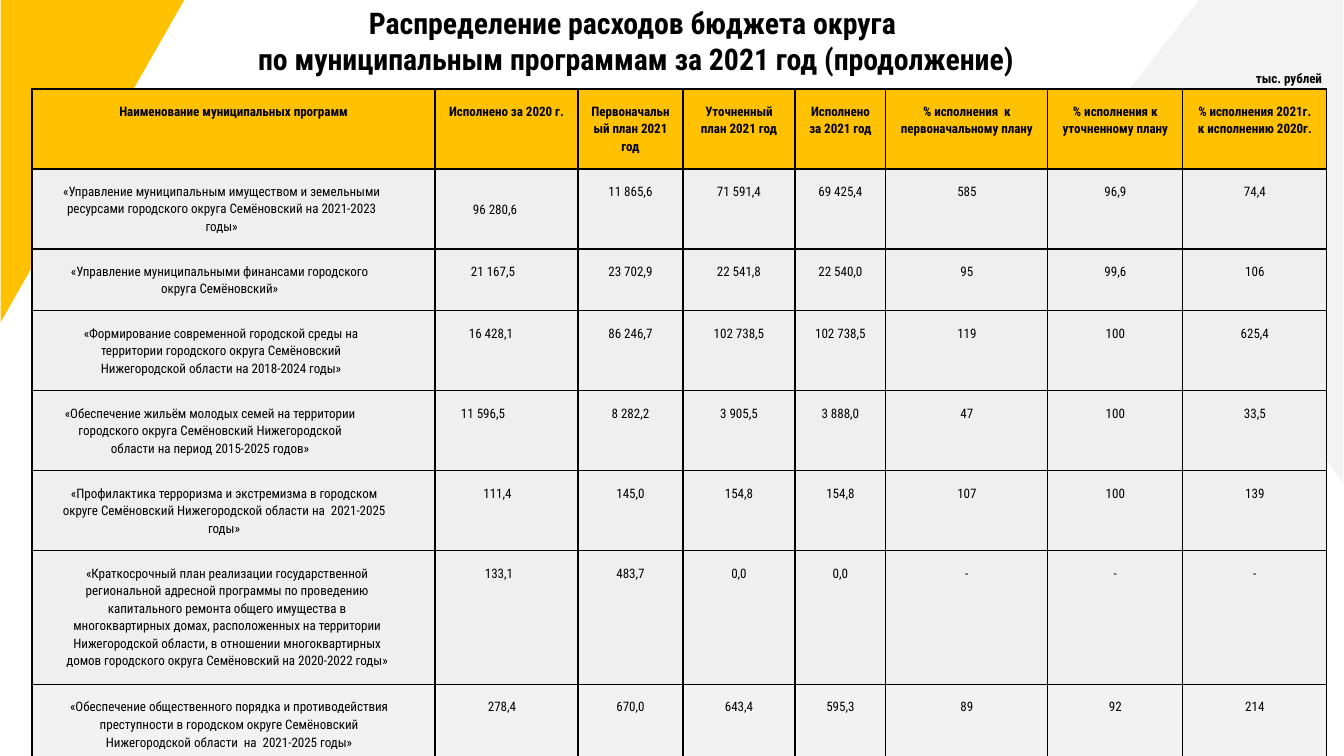
from lxml import etree
from pptx import Presentation
from pptx.dml.color import RGBColor
from pptx.enum.shapes import MSO_SHAPE
from pptx.enum.text import MSO_ANCHOR, PP_ALIGN
from pptx.oxml.ns import qn
from pptx.util import Pt

CENTER, LEFT = PP_ALIGN.CENTER, PP_ALIGN.LEFT
TOP, MIDDLE = MSO_ANCHOR.TOP, MSO_ANCHOR.MIDDLE
TRIANGLE, CORNER = MSO_SHAPE.ISOSCELES_TRIANGLE, MSO_SHAPE.RIGHT_TRIANGLE

FONT = "Roboto Condensed"
BLACK, GOLD, GREY, PALE, MIST = "000000", "FFC100", "EFEFEF", "F2F2F2", "F3F3F3"
WIDE, HIGH = 1344, 756
INSET, INDENT = 13, 13

TITLE = "Распределение расходов бюджета округа \vпо муниципальным программам за 2021 год (продолжение)"
UNIT = "тыс. рублей"
DECOR = [
    (TRIANGLE, (884, 24, 668, 251), 270, MIST),
    (CORNER, (-69, 69, 323, 184), 90, GOLD),
]
HEAD = [
    "Наименование муниципальных программ", "Исполнено за 2020 г.",
    "Первоначальный план 2021 год", "Уточненный план 2021 год",
    "Исполнено за 2021 год", "% исполнения  к первоначальному плану",
    "% исполнения к уточненному плану", "% исполнения 2021г.\vк исполнению 2020г.",
]
ROWS = [
    ["«Управление муниципальным имуществом и земельными ресурсами городского округа Семёновский на 2021-2023 годы»",
     "96 280,6", "11 865,6", "71 591,4", "69 425,4", "585", "96,9", "74,4"],
    ["«Управление муниципальными финансами городского округа Семёновский»",
     "21 167,5", "23 702,9", "22 541,8", "22 540,0", "95", "99,6", "106"],
    ["«Формирование современной городской среды на территории городского округа Семёновский Нижегородской области на 2018-2024 годы»",
     "16 428,1", "86 246,7", "102 738,5", "102 738,5", "119", "100", "625,4"],
    ["«Обеспечение жильём молодых семей на территории городского округа Семёновский Нижегородской области на период 2015-2025 годов»",
     "11 596,5", "8 282,2", "3 905,5", "3 888,0", "47", "100", "33,5"],
    ["«Профилактика терроризма и экстремизма в городском округе Семёновский Нижегородской области на  2021-2025 годы»",
     "111,4", "145,0", "154,8", "154,8", "107", "100", "139"],
    ["«Краткосрочный план реализации государственной региональной адресной программы по проведению капитального ремонта "
     "общего имущества в многоквартирных домах, расположенных на территории Нижегородской области, в отношении "
     "многоквартирных домов городского округа Семёновский на 2020-2022 годы»",
     "133,1", "483,7", "0,0", "0,0", "-", "-", "-"],
    ["«Обеспечение общественного порядка и противодействия преступности в городском округе Семёновский Нижегородской области  на  2021-2025 годы»",
     "278,4", "670,0", "643,4", "595,3", "89", "92", "214"],
]
COLS = [403, 143, 105, 112, 91, 162, 135, 144]
TALL = [63, 60, 60, 62, 78, 60, 114, 62]
PADS = [(37, 36), (41, 40), (38, 44), (60, 60), (32, 31), (26, 28), (22, 22)]


def px(size):
    """Turn px into EMU."""
    return round(size * 914400 / 134.4)


def paint(fill, color):
    """Give a fill one solid colour."""
    fill.solid()
    fill.fore_color.rgb = RGBColor.from_string(color)


def style(para, size, bold, align):
    """Set the look of a paragraph."""
    para.alignment = align
    font = para.font
    font.name, font.size, font.bold = FONT, Pt(size), bold
    font.color.rgb = RGBColor.from_string(BLACK)


def label(slide, text, box, size, align, inset, wrap):
    """Add a bold text box."""
    frame = slide.shapes.add_textbox(*map(px, box)).text_frame
    frame.word_wrap = wrap
    frame.vertical_anchor = TOP
    frame.margin_left = frame.margin_right = px(inset)
    frame.margin_top = frame.margin_bottom = px(inset)
    frame.text = text
    style(frame.paragraphs[0], size, True, align)


def border(cell):
    """Draw thin black lines on all sides of a cell."""
    props = cell._tc.get_or_add_tcPr()
    for spot, side in enumerate(("lnL", "lnR", "lnT", "lnB")):
        line = etree.Element(qn("a:" + side), w=str(Pt(0.75)))
        fill = etree.SubElement(line, qn("a:solidFill"))
        etree.SubElement(fill, qn("a:srgbClr"), val=BLACK)
        props.insert(spot, line)


def fill_cell(cell, text, bold, color, pad):
    """Write and style one cell."""
    cell.text = text
    cell.margin_left = cell.margin_right = px(INSET)
    cell.margin_top = cell.margin_bottom = px(INSET)
    paint(cell.fill, color)
    border(cell)
    para = cell.text_frame.paragraphs[0]
    style(para, 7, bold, CENTER)
    para.line_spacing = 1.15
    if pad:
        props = para._p.get_or_add_pPr()
        props.set("marL", str(px(INDENT)))
        props.set("marR", str(px(pad)))


def add_grid(slide):
    """Add the table of programmes."""
    data = [HEAD] + ROWS
    box = (32, 89, sum(COLS), sum(TALL))
    table = slide.shapes.add_table(len(data), len(COLS), *map(px, box)).table
    table.first_row = table.horz_banding = False
    for col, width in zip(table.columns, COLS):
        col.width = px(width)
    for r, (row, height) in enumerate(zip(data, TALL)):
        table.rows[r].height = px(height)
        color = GOLD if r == 0 else PALE if r == len(ROWS) else GREY
        for c, text in enumerate(row):
            pad = PADS[r - 1][c] if r and c < 2 else 0
            fill_cell(table.cell(r, c), text, r == 0, color, pad)
    table.cell(1, 1).vertical_anchor = MIDDLE


def main():
    """Build the slide."""
    deck = Presentation()
    deck.slide_width, deck.slide_height = px(WIDE), px(HIGH)
    slide = deck.slides.add_slide(deck.slide_layouts[6])
    for kind, box, turn, color in DECOR:
        shape = slide.shapes.add_shape(kind, *map(px, box))
        shape.rotation = turn
        shape.shadow.inherit = False
        paint(shape.fill, color)
        shape.line.fill.background()
        if kind == TRIANGLE:
            shape.adjustments[0] = 0.52
    label(slide, TITLE, (77, -8, 1118, 52), 16, CENTER, INSET, True)
    add_grid(slide)
    label(slide, UNIT, (1255, 69, 80, 17), 7, LEFT, 1, False)
    deck.save("out.pptx")


if __name__ == "__main__":
    main()
